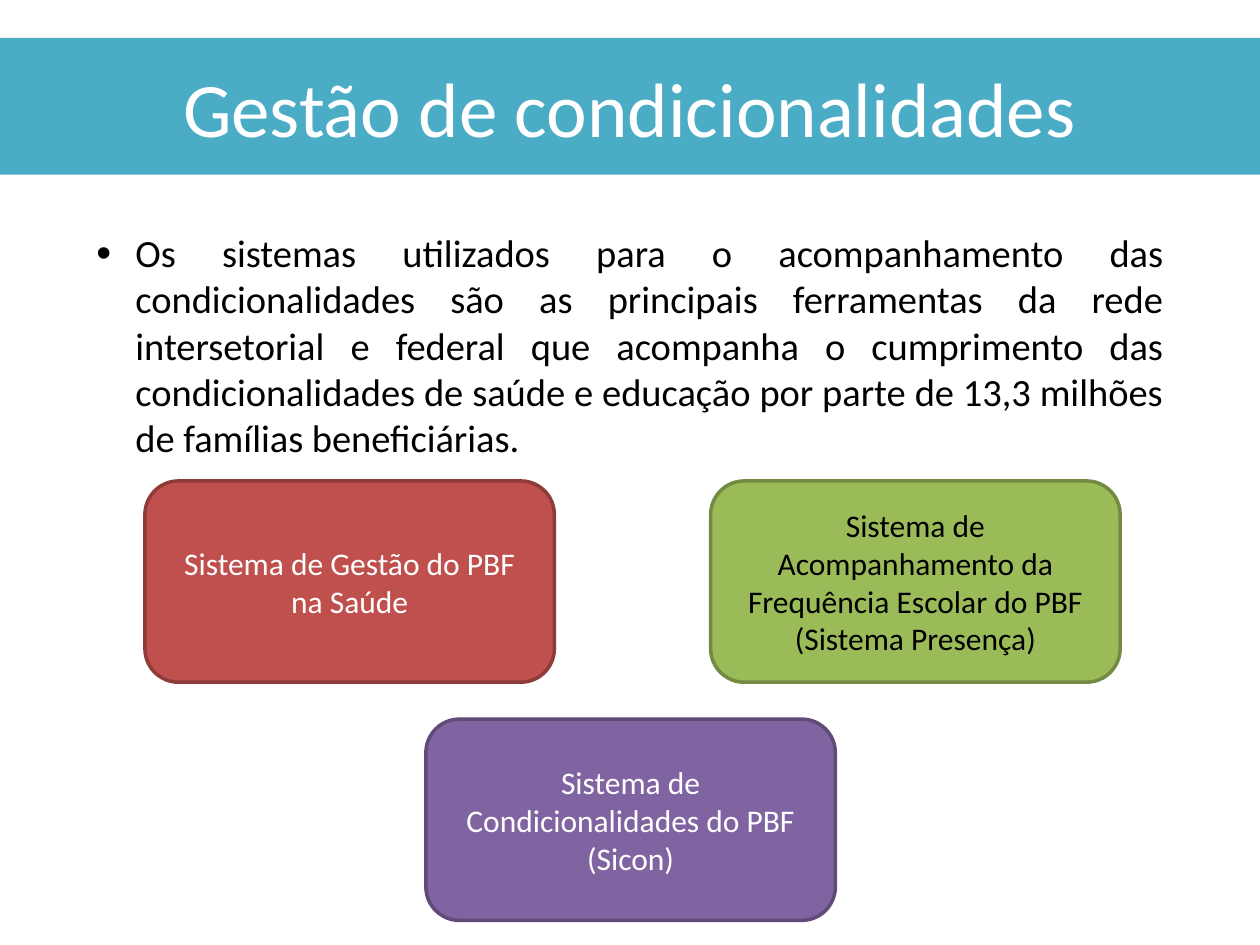
import dataclasses

import lxml.etree
import pptx
import pptx.dml.color
import pptx.enum.shapes
import pptx.enum.text
import pptx.oxml.ns
import pptx.util


@dataclasses.dataclass(frozen=True)
class Theme:
    font: str = "Calibri"
    title_size: int = 44
    body_size: int = 22
    box_size: int = 18
    white: str = "FFFFFF"
    black: str = "000000"
    banner: str = "4BACC6"
    health: tuple = ("C0504D", "8E3B39")
    school: tuple = ("9BBB59", "738A42")
    conditions: tuple = ("8064A2", "5F4A78")


theme = Theme()
rgb = pptx.dml.color.RGBColor.from_string
shapes_kinds = pptx.enum.shapes.MSO_SHAPE
align = pptx.enum.text.PP_ALIGN

deck = pptx.Presentation()
deck.slide_width = pptx.util.Inches(10)
deck.slide_height = pptx.util.Inches(7.5)
W, H = deck.slide_width, deck.slide_height
slide = deck.slides.add_slide(deck.slide_layouts[6])


def write(shape, lines, size, color, alignment):
    """Fill a shape with one paragraph per line."""
    frame = shape.text_frame
    frame.word_wrap = True
    frame.text = "\n".join(lines)
    for paragraph in frame.paragraphs:
        paragraph.alignment = alignment
        paragraph.font.name = theme.font
        paragraph.font.size = pptx.util.Pt(size)
        paragraph.font.color.rgb = rgb(color)


def add_block(kind, left, top, width, height, fill, lines, size, color):
    """Add a filled shape with centred text."""
    block = slide.shapes.add_shape(kind, int(left), int(top), int(width), int(height))
    block.shadow.inherit = False
    block.fill.solid()
    block.fill.fore_color.rgb = rgb(fill)
    block.text_frame.vertical_anchor = pptx.enum.text.MSO_ANCHOR.MIDDLE
    write(block, lines, size, color, align.CENTER)
    return block


# Title banner across the full width
banner = add_block(shapes_kinds.RECTANGLE, 0, 0.04 * H, W, 0.145 * H, theme.banner,
                   ["Gestão de condicionalidades"], theme.title_size, theme.white)
banner.line.fill.background()

# Justified introduction with a hanging bullet
margin = W / 15
intro = slide.shapes.add_textbox(int(margin), int(0.236 * H), int(W - 2 * margin), int(0.26 * H))
write(intro, [
    "Os sistemas utilizados para o acompanhamento das condicionalidades são as "
    "principais ferramentas da rede intersetorial e federal que acompanha o "
    "cumprimento das condicionalidades de saúde e educação por parte de 13,3 "
    "milhões de famílias beneficiárias."
], theme.body_size, theme.black, align.JUSTIFY)
indent = pptx.util.Inches(0.31)
bullet_props = intro.text_frame.paragraphs[0]._p.get_or_add_pPr()
bullet_props.set("marL", str(indent))
bullet_props.set("indent", str(-indent))
bullet_parts = [("a:buSzPct", {"val": "110000"}), ("a:buFont", {"typeface": "Arial"}),
                ("a:buChar", {"char": "•"})]
for position, (tag, attributes) in enumerate(bullet_parts):
    bullet_props.insert(position, lxml.etree.Element(pptx.oxml.ns.qn(tag), attributes))

# Three systems: two above, one centred below
box_width, box_height = 0.325 * W, 0.213 * H
upper_row, lower_row = 0.509 * H, 0.761 * H
systems = [
    (0.338 * W, lower_row, theme.conditions, theme.white,
     ["Sistema de Condicionalidades do PBF (Sicon)"]),
    (0.564 * W, upper_row, theme.school, theme.black,
     ["Sistema de Acompanhamento da Frequência Escolar do PBF", "(Sistema Presença)"]),
    (0.115 * W, upper_row, theme.health, theme.white,
     ["Sistema de Gestão do PBF na Saúde"]),
]
for left, top, (fill, edge), color, lines in systems:
    system = add_block(shapes_kinds.ROUNDED_RECTANGLE, left, top, box_width, box_height,
                       fill, lines, theme.box_size, color)
    system.line.color.rgb = rgb(edge)
    system.line.width = pptx.util.Pt(2)

deck.save("out.pptx")
